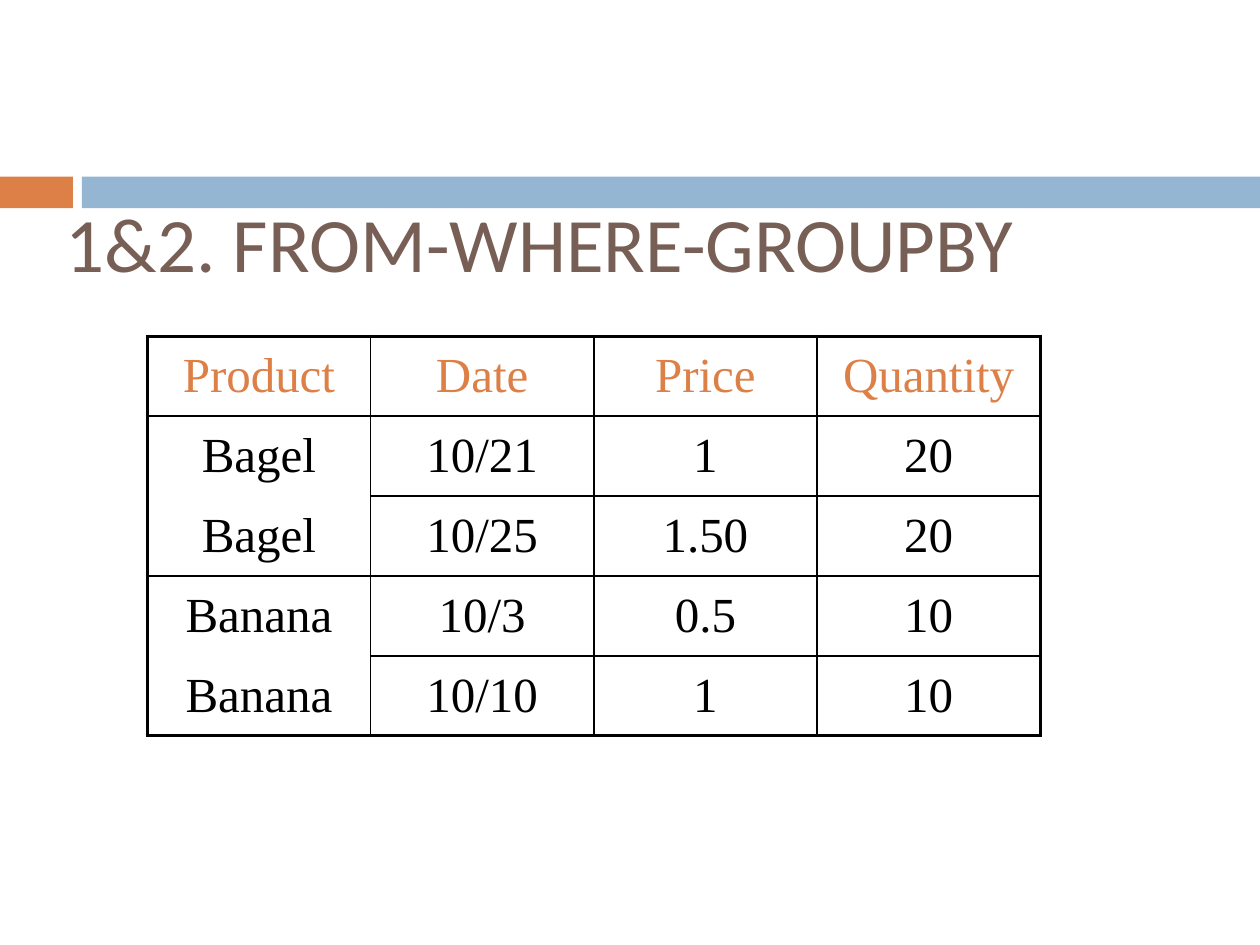
"""Build a slide that shows the rows left after FROM, WHERE and GROUP BY."""
import lxml.etree
import pptx
import pptx.dml.color
import pptx.enum.shapes
import pptx.enum.text
import pptx.oxml
import pptx.oxml.ns
import pptx.util
from pptx.util import Cm

COLORS = {
    "accent": "DD8047",
    "band": "94B6D2",
    "title": "775F55",
    "ink": "000000",
}
HEADER = ["Product", "Date", "Price", "Quantity"]
SALES = [
    ["Bagel", "10/21", "1", "20"],
    ["Bagel", "10/25", "1.50", "20"],
    ["Banana", "10/3", "0.5", "10"],
    ["Banana", "10/10", "1", "10"],
]


class SlideBuilder:
    title_font = "Calibri"
    table_font = "Times New Roman"
    outer_line = 2.25
    inner_line = 1

    def __init__(self, slide):
        self.slide = slide

    def color(self, name):
        return pptx.dml.color.RGBColor.from_string(COLORS[name])

    def style(self, paragraph, font_name, size, color):
        paragraph.font.name = font_name
        paragraph.font.size = pptx.util.Pt(size)
        paragraph.font.color.rgb = self.color(color)

    def bar(self, left, width, color):
        bar = self.slide.shapes.add_shape(
            pptx.enum.shapes.MSO_SHAPE.RECTANGLE,
            Cm(left), Cm(3.56), Cm(width), Cm(0.64))
        bar.shadow.inherit = False
        bar.fill.solid()
        bar.fill.fore_color.rgb = self.color(color)
        bar.line.fill.background()

    def title(self, heading):
        title = self.slide.shapes.title
        title.left, title.top = Cm(1.07), Cm(3.28)
        title.width, title.height = Cm(22.86), Cm(3.18)
        frame = title.text_frame
        frame.text = heading
        frame.word_wrap = True
        frame.auto_size = pptx.enum.text.MSO_AUTO_SIZE.NONE
        frame.vertical_anchor = pptx.enum.text.MSO_ANCHOR.MIDDLE
        frame.paragraphs[0].alignment = pptx.enum.text.PP_ALIGN.LEFT
        self.style(frame.paragraphs[0], self.title_font, 44, "title")

    def border(self, cell, side, width):
        properties = cell._tc.get_or_add_tcPr()
        line = lxml.etree.SubElement(
            properties, pptx.oxml.ns.qn(f"a:ln{side}"), w=str(pptx.util.Pt(width)))
        if not width:
            lxml.etree.SubElement(line, pptx.oxml.ns.qn("a:noFill"))
            return
        fill = lxml.etree.SubElement(line, pptx.oxml.ns.qn("a:solidFill"))
        lxml.etree.SubElement(fill, pptx.oxml.ns.qn("a:srgbClr"), val=COLORS["ink"])

    def cell(self, cell, value, color, borders):
        cell.text = value
        cell.vertical_anchor = pptx.enum.text.MSO_ANCHOR.MIDDLE
        paragraph = cell.text_frame.paragraphs[0]
        paragraph.alignment = pptx.enum.text.PP_ALIGN.CENTER
        self.style(paragraph, self.table_font, 28, color)
        for side, width in borders.items():
            self.border(cell, side, width)
        cell.fill.background()

    def table(self, rows, left, top, column_width, row_height):
        row_count, column_count = len(rows), len(rows[0])
        table = self.slide.shapes.add_table(
            row_count, column_count, Cm(left), Cm(top),
            Cm(column_width * column_count), Cm(row_height * row_count)).table
        table.first_row = table.horz_banding = False
        for column in table.columns:
            column.width = Cm(column_width)
        for row in table.rows:
            row.height = Cm(row_height)

        def edge(is_outer, is_joined=False):
            if is_outer:
                return self.outer_line
            return 0 if is_joined else self.inner_line

        def same_group(upper, column):
            return column == 0 and rows[upper][0] == rows[upper + 1][0]

        last_row, last_column = row_count - 1, column_count - 1
        for r, values in enumerate(rows):
            for c, value in enumerate(values):
                borders = {
                    "L": edge(c == 0),
                    "R": edge(c == last_column),
                    "T": edge(r == 0, r > 0 and same_group(r - 1, c)),
                    "B": edge(r == last_row, r < last_row and same_group(r, c)),
                }
                color = "accent" if r == 0 else "ink"
                self.cell(table.cell(r, c), value, color, borders)


def main():
    deck = pptx.Presentation()
    deck.slide_width, deck.slide_height = Cm(25.4), Cm(19.05)
    builder = SlideBuilder(deck.slides.add_slide(deck.slide_layouts[5]))
    builder.bar(0, 1.47, "accent")
    builder.bar(1.65, 23.75, "band")
    builder.title("1&2. FROM-WHERE-GROUPBY")
    builder.table([HEADER] + SALES, 2.97, 6.78, 4.5, 1.61)
    deck.save("out.pptx")


if __name__ == "__main__":
    main()
